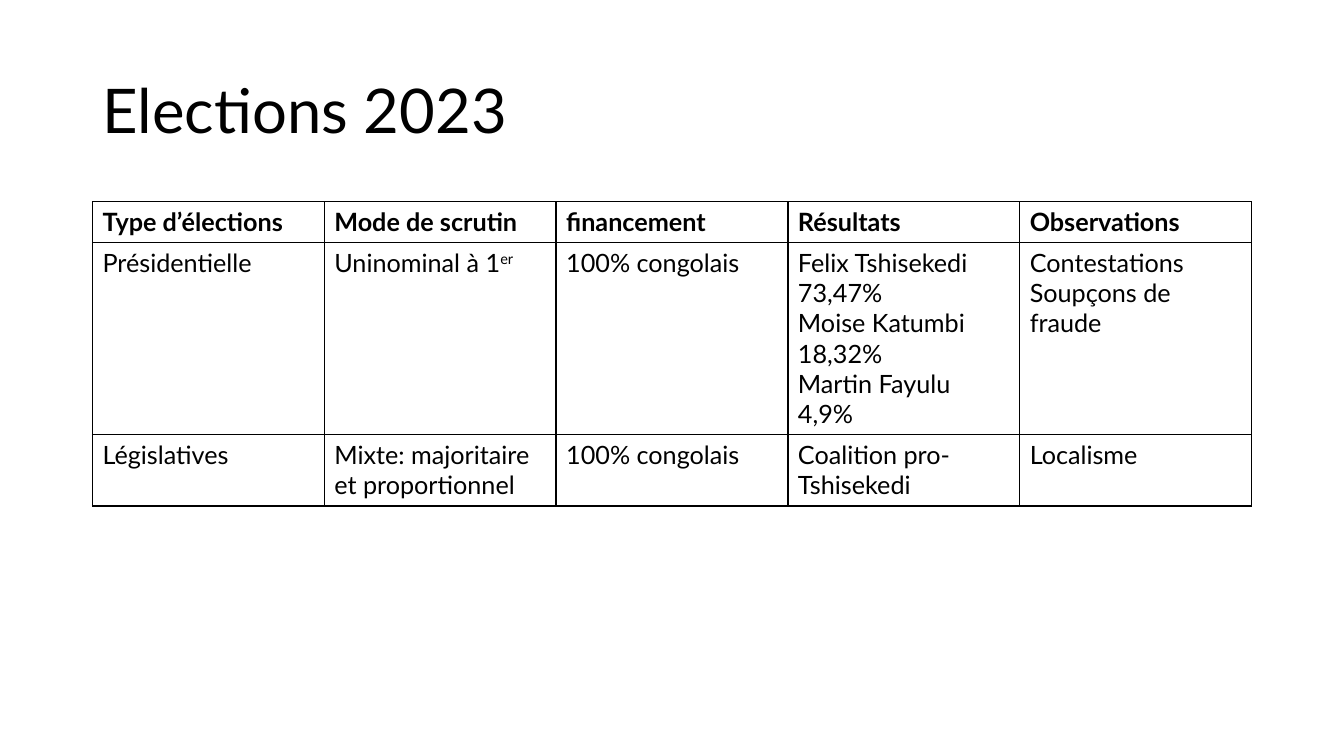
from lxml import etree
from pptx import Presentation
from pptx.dml.color import RGBColor
from pptx.enum import text as t
from pptx.oxml import ns
from pptx.util import Cm, Pt

FONT = "Lato"
INK = "000000"
LEFT, WIDTH = Cm(2.33), Cm(29.21)
HEIGHTS = (1.03, 4.84, 1.8)
HEAD = ["Type d’élections", "Mode de scrutin", "financement", "Résultats", "Observations"]
ROWS = [
    HEAD,
    [
        "Présidentielle",
        "Uninominal à 1^er",
        "100% congolais",
        "Felix Tshisekedi 73,47%\nMoise Katumbi 18,32%\nMartin Fayulu 4,9%",
        "Contestations\nSoupçons de fraude",
    ],
    [
        "Législatives",
        "Mixte: majoritaire et proportionnel",
        "100% congolais",
        "Coalition pro-Tshisekedi",
        "Localisme",
    ],
]


def color(code):
    """Turn a hex string into a colour."""
    return RGBColor.from_string(code)


def add_run(para, words, size, bold=False, high=False):
    """Add one styled run, raised if high."""
    run = para.add_run()
    run.text = words
    font = run.font
    font.name, font.size, font.bold = FONT, Pt(size), bold
    font.color.rgb = color(INK)
    if high:
        run._r.get_or_add_rPr().set("baseline", "30000")


def add_title(slide, words):
    """Place and fill the title."""
    title = slide.shapes.title
    title.left, title.top, title.width, title.height = LEFT, Cm(1.01), WIDTH, Cm(3.68)
    frame = title.text_frame
    frame.word_wrap = True
    frame.auto_size = t.MSO_AUTO_SIZE.NONE
    frame.vertical_anchor = t.MSO_ANCHOR.MIDDLE
    para = frame.paragraphs[0]
    para.alignment = t.PP_ALIGN.LEFT
    para.line_spacing = 0.9
    add_run(para, words, 44)


def add_edges(cell):
    """Draw a thin line on all four sides of a cell."""
    props = cell._tc.get_or_add_tcPr()
    for side in ("lnL", "lnR", "lnT", "lnB"):
        line = etree.SubElement(props, ns.qn(f"a:{side}"), w=str(Pt(1)))
        fill = etree.SubElement(line, ns.qn("a:solidFill"))
        etree.SubElement(fill, ns.qn("a:srgbClr"), val=INK)


def fill_cell(cell, words, bold):
    """Write a cell: newline splits paragraphs, caret starts a superscript."""
    add_edges(cell)
    cell.fill.background()
    frame = cell.text_frame
    for i, line in enumerate(words.split("\n")):
        para = frame.add_paragraph() if i else frame.paragraphs[0]
        for j, part in enumerate(line.split("^")):
            add_run(para, part, 18, bold, high=j > 0)


def add_grid(slide, rows):
    """Add the table of elections."""
    size = len(rows), len(rows[0])
    grid = slide.shapes.add_table(*size, LEFT, Cm(5.08), WIDTH, Cm(sum(HEIGHTS))).table
    grid.horz_banding = False
    grid.first_row = False
    for i, row in enumerate(rows):
        grid.rows[i].height = Cm(HEIGHTS[i])
        for j, words in enumerate(row):
            fill_cell(grid.cell(i, j), words, bold=i == 0)


def main():
    """Build and save the slide."""
    deck = Presentation()
    deck.slide_width, deck.slide_height = Cm(33.87), Cm(19.05)
    slide = deck.slides.add_slide(deck.slide_layouts[5])
    add_title(slide, "Elections 2023")
    add_grid(slide, ROWS)
    deck.save("out.pptx")


if __name__ == "__main__":
    main()
